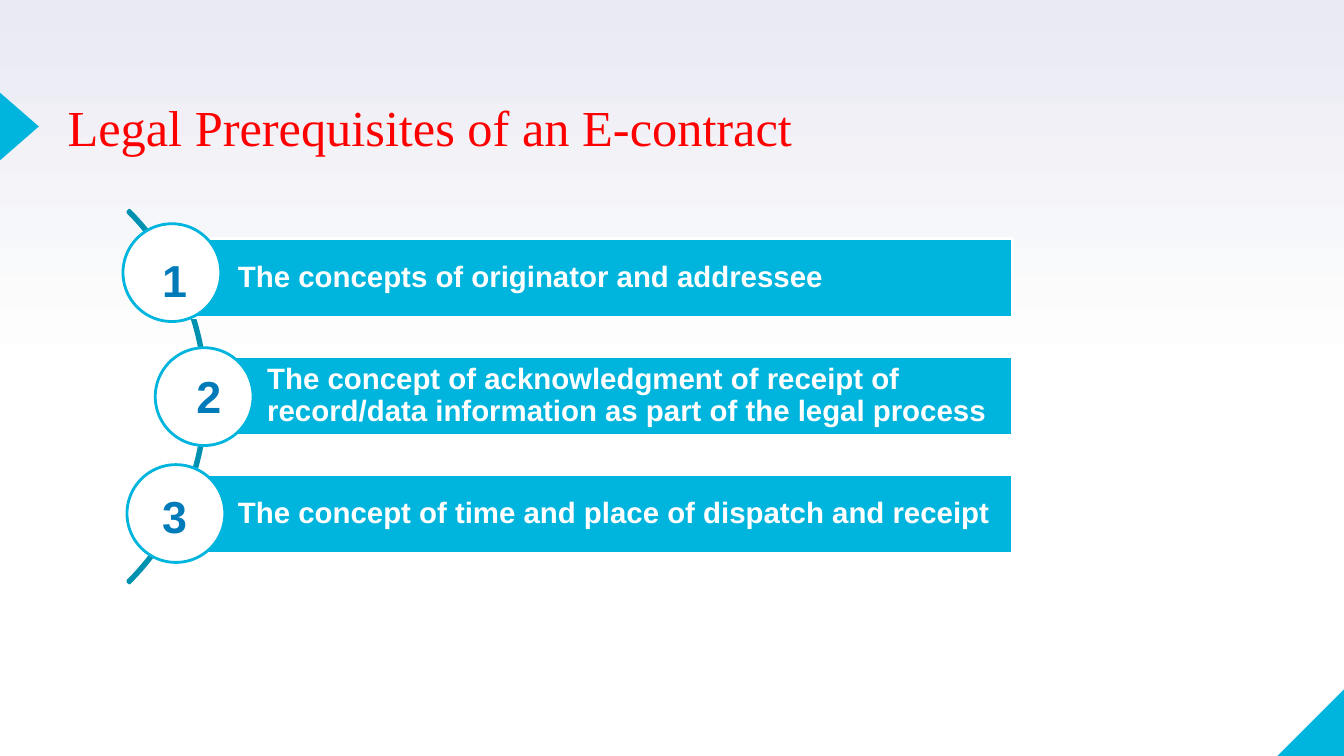
from copy import deepcopy
from dataclasses import dataclass

from pptx import Presentation
from pptx.dml.color import RGBColor
from pptx.enum import shapes, text
from pptx.util import Inches, Pt


@dataclass(frozen=True)
class Theme:
    accent: RGBColor = RGBColor(0x00, 0xB5, 0xDD)
    arc: RGBColor = RGBColor(0x00, 0x91, 0xB1)
    number: RGBColor = RGBColor(0x00, 0x7B, 0xB9)
    title: RGBColor = RGBColor(0xFF, 0x00, 0x00)
    white: RGBColor = RGBColor(0xFF, 0xFF, 0xFF)
    haze: RGBColor = RGBColor(0xE9, 0xEA, 0xF2)
    title_font: str = "Times New Roman"
    body_font: str = "Arial"
    title_size: Pt = Pt(36)
    bar_size: Pt = Pt(21)
    number_size: Pt = Pt(32)
    line_width: Pt = Pt(2)


THEME = Theme()
CIRCLE_SIZE = 0.97
BAR_HEIGHT = 0.78
BAR_RIGHT = 10.04

PREREQUISITES = [
    ("The concepts of originator and addressee",
     (1.74, 2.37), (1.22, 2.22), (1.51, 2.46)),
    ("The concept of acknowledgment of receipt of record/data information "
     "as part of the legal process",
     (2.03, 3.54), (1.54, 3.45), (1.85, 3.61)),
    ("The concept of time and place of dispatch and receipt",
     (1.74, 4.71), (1.26, 4.61), (1.51, 4.8)),
]


def set_font(paragraph, name, size, color, bold=False):
    paragraph.font.name = name
    paragraph.font.size = size
    paragraph.font.color.rgb = color
    paragraph.font.bold = bold


def set_insets(frame, left, top, right, bottom):
    frame.margin_left, frame.margin_top = Inches(left), Inches(top)
    frame.margin_right, frame.margin_bottom = Inches(right), Inches(bottom)


def add_figure(slide, preset, box, fill=None, line=None):
    figure = slide.shapes.add_shape(preset, *map(Inches, box))
    figure.shadow.inherit = False
    if fill is None:
        figure.fill.background()
    else:
        figure.fill.solid()
        figure.fill.fore_color.rgb = fill
    if line is None:
        figure.line.fill.background()
    else:
        figure.line.color.rgb = line
        figure.line.width = THEME.line_width
    return figure


def paint_background(slide):
    fill = slide.background.fill
    fill.gradient()
    fill.gradient_angle = 90
    stops = fill._fill._gradFill.gsLst
    while len(stops) > 1:
        stops.remove(stops[-1])
    stops.extend([deepcopy(stops[0]), deepcopy(stops[0])])
    colors = (THEME.white, THEME.white, THEME.haze)
    for stop, position, color in zip(fill.gradient_stops, (0, 0.5, 1), colors):
        stop.position = position
        stop.color.rgb = color


def add_decorations(slide):
    corner = add_figure(slide, shapes.MSO_SHAPE.RIGHT_TRIANGLE,
                        (12.67, 6.82, 0.68, 0.68), THEME.accent)
    corner._element.spPr.xfrm.set("flipH", "1")
    pointer = add_figure(slide, shapes.MSO_SHAPE.ISOSCELES_TRIANGLE,
                         (-0.15, 1.06, 0.68, 0.39), THEME.accent)
    pointer.rotation = 90


def add_title(slide, wording):
    title = slide.shapes.title
    title.left, title.top = Inches(0.67), Inches(0.88)
    title.width, title.height = Inches(8.23), Inches(1.58)
    frame = title.text_frame
    frame.text = wording
    frame.word_wrap = True
    frame.auto_size = text.MSO_AUTO_SIZE.NONE
    frame.vertical_anchor = text.MSO_ANCHOR.TOP
    set_insets(frame, 0, 0.07, 0, 0)
    heading = frame.paragraphs[0]
    heading.alignment = text.PP_ALIGN.LEFT
    heading.line_spacing = 1.0
    heading.space_before = Pt(0)
    set_font(heading, THEME.title_font, THEME.title_size, THEME.title)


def add_arc(slide):
    arc = add_figure(slide, shapes.MSO_SHAPE.BLOCK_ARC,
                     (-3.18, 1.32, 5.23, 5.23), line=THEME.arc)
    for index, value in enumerate((189, 27, 0.005)):
        arc.adjustments[index] = value


def add_bar(slide, wording, left, top):
    bar = add_figure(slide, shapes.MSO_SHAPE.RECTANGLE,
                     (left, top, BAR_RIGHT - left, BAR_HEIGHT),
                     THEME.accent, THEME.white)
    frame = bar.text_frame
    frame.text = wording
    frame.word_wrap = True
    frame.vertical_anchor = text.MSO_ANCHOR.MIDDLE
    set_insets(frame, 0.62, 0.06, 0.06, 0.06)
    statement = frame.paragraphs[0]
    statement.alignment = text.PP_ALIGN.LEFT
    statement.line_spacing = 0.9
    set_font(statement, THEME.body_font, THEME.bar_size, THEME.white, True)


def add_number(slide, number, left, top):
    label = slide.shapes.add_textbox(Inches(left), Inches(top),
                                     Inches(0.34), Inches(0.64))
    frame = label.text_frame
    frame.text = str(number)
    frame.word_wrap = True
    frame.auto_size = text.MSO_AUTO_SIZE.SHAPE_TO_FIT_TEXT
    set_font(frame.paragraphs[0], THEME.body_font, THEME.number_size,
             THEME.number, True)


def main():
    deck = Presentation()
    deck.slide_width, deck.slide_height = Inches(13.33), Inches(7.5)
    slide = deck.slides.add_slide(deck.slide_layouts[5])
    paint_background(slide)
    add_decorations(slide)
    add_title(slide, "Legal Prerequisites of an E-contract")
    add_arc(slide)
    for number, (wording, bar, circle, label) in enumerate(PREREQUISITES, 1):
        add_bar(slide, wording, *bar)
        add_figure(slide, shapes.MSO_SHAPE.OVAL,
                   (*circle, CIRCLE_SIZE, CIRCLE_SIZE),
                   THEME.white, THEME.accent)
        add_number(slide, number, *label)
    deck.save("out.pptx")


if __name__ == "__main__":
    main()
